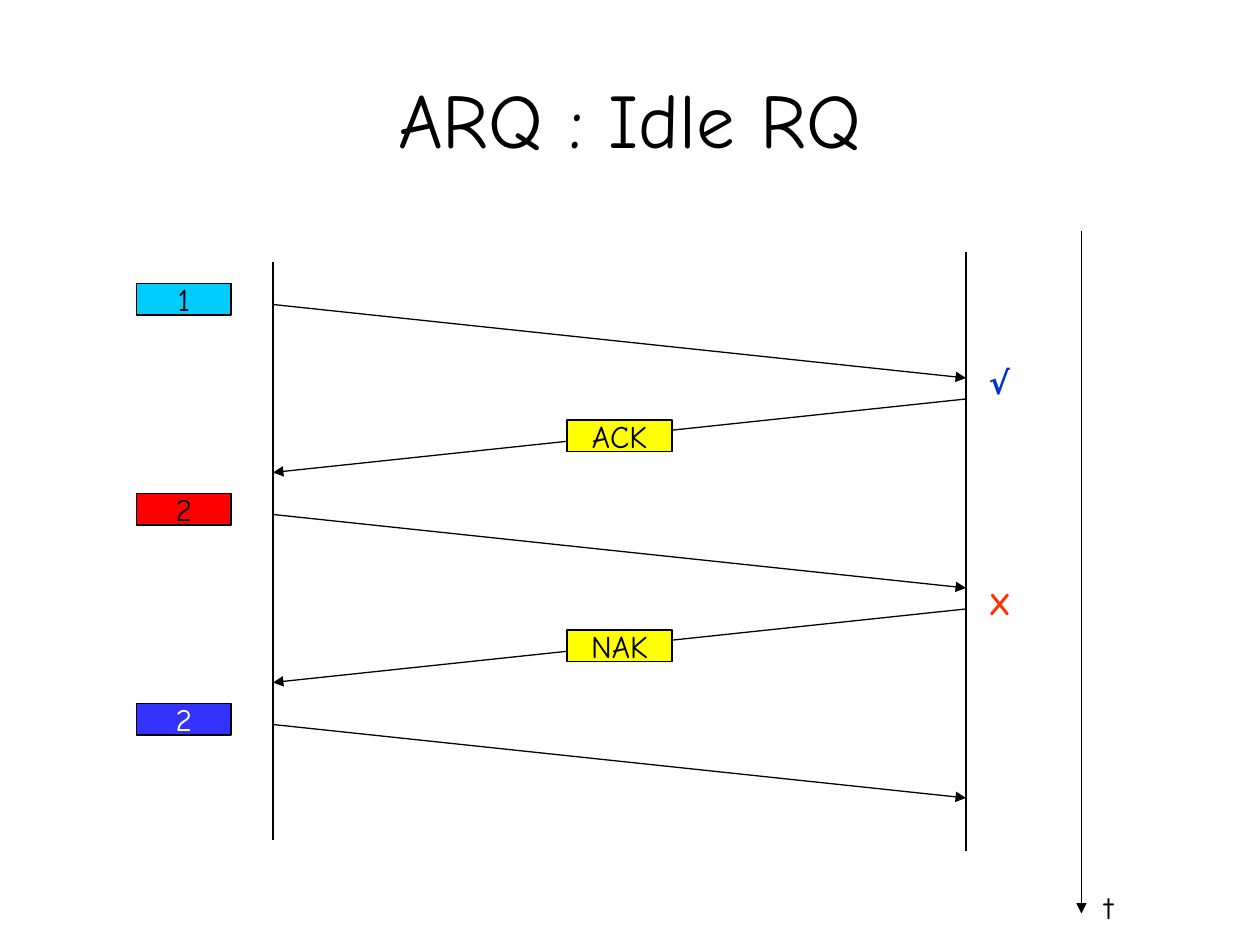
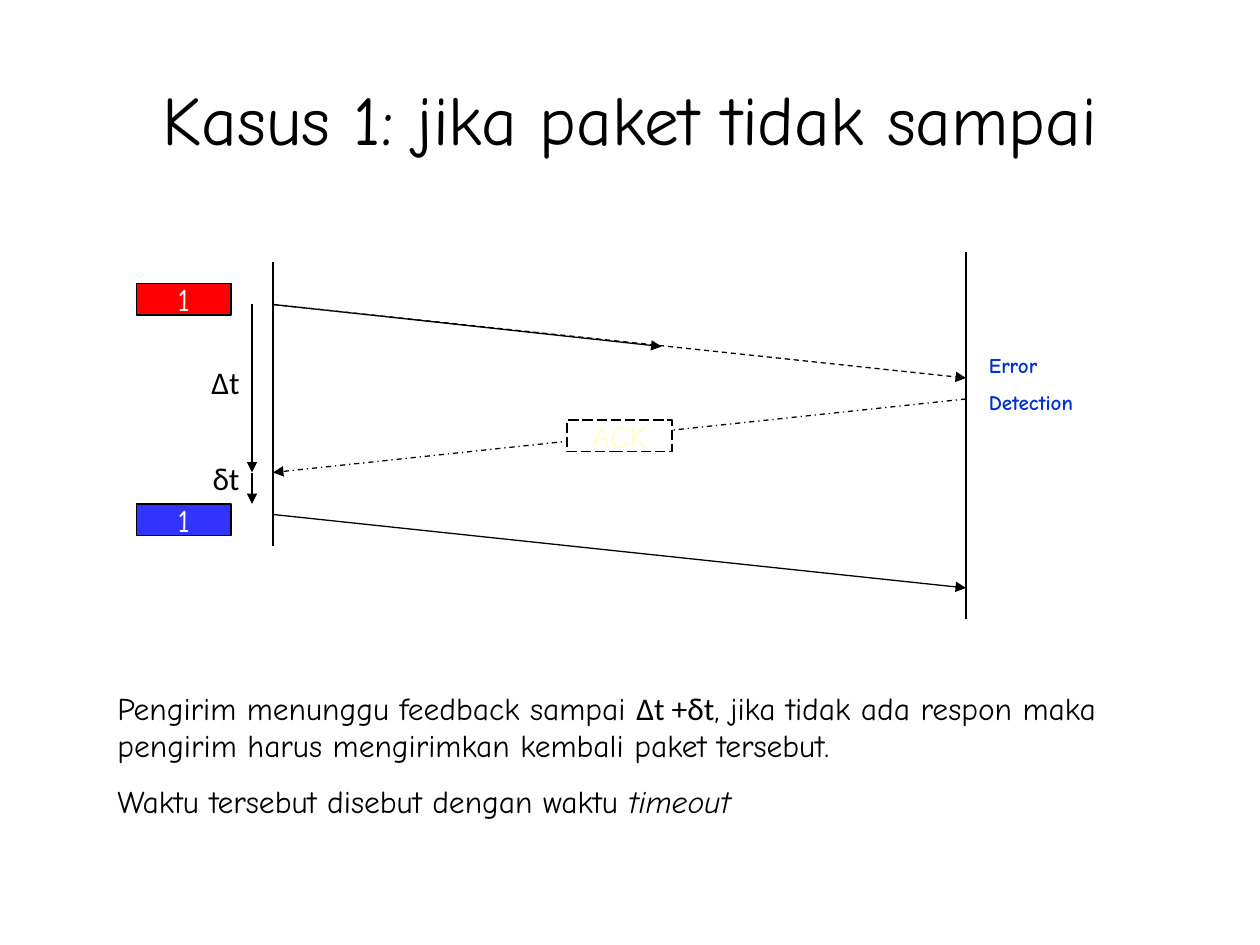
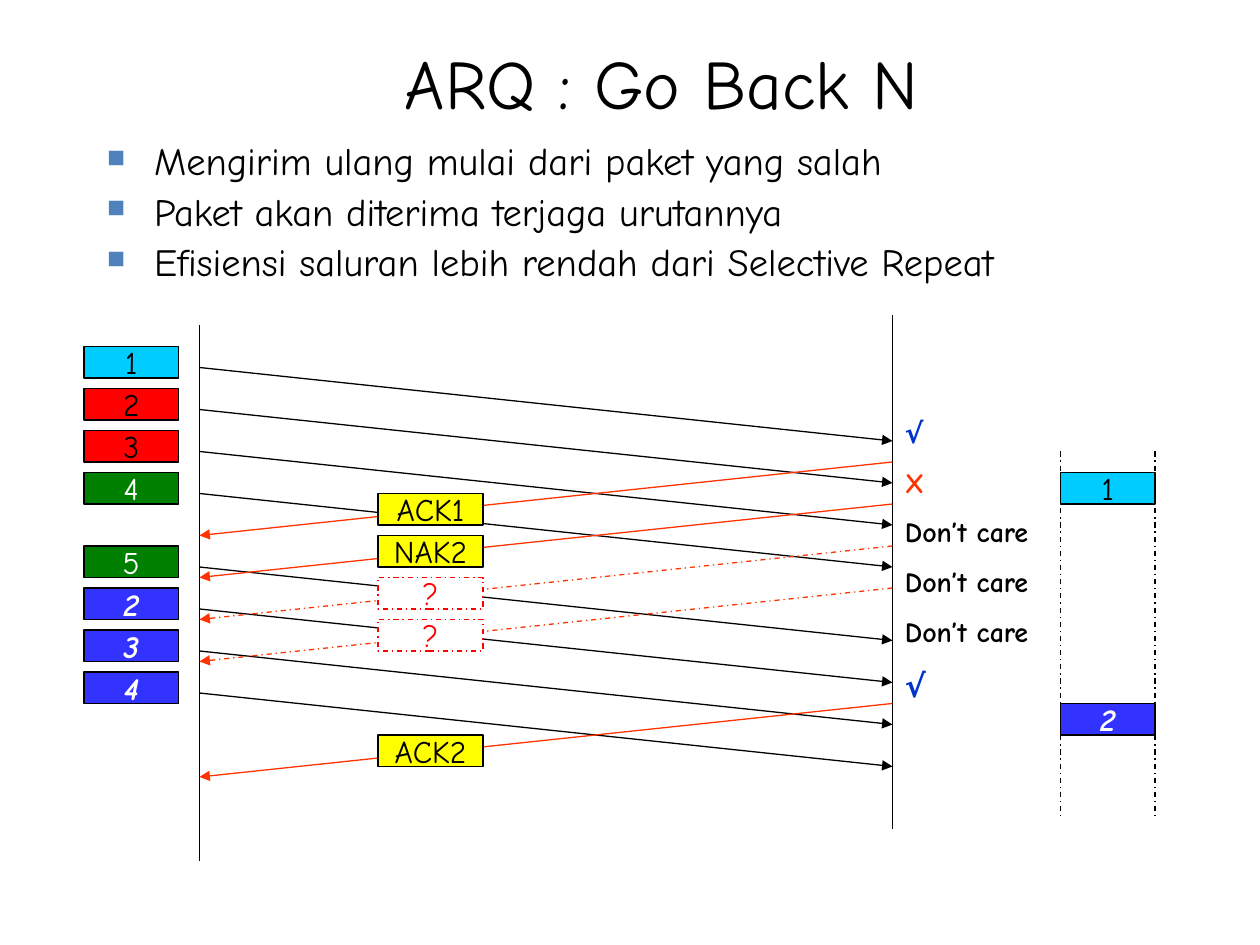
from lxml.etree import SubElement
from pptx import Presentation
from pptx.dml.color import RGBColor
from pptx.enum.dml import MSO_LINE
from pptx.enum.shapes import MSO_CONNECTOR, MSO_SHAPE
from pptx.enum.text import MSO_ANCHOR, MSO_AUTO_SIZE, PP_ALIGN
from pptx.oxml.ns import qn
from pptx.util import Emu, Pt

COLORS = {
    "black": "000000", "white": "FFFFFF", "cyan": "00CCFF", "red": "FF0000",
    "blue": "3333FF", "green": "008000", "yellow": "FFFF00", "cream": "FFFFCC",
    "ok": "0033CC", "error": "FF3300", "bullet": "4F81BD",
}
SCALE = 7620
FONT = "Comic Neue"
SYMBOL_FONT = "Calibri"
TITLE_ONLY = 5
LINE_HEIGHT = 1.15
SPAN, DROP = 660, 70
STRONG = {"bold": True, "italic": True}


def px(n):
    return Emu(n * SCALE)


def rgb(name):
    return RGBColor.from_string(COLORS[name])


class Deck:
    def __init__(self):
        self.prs = Presentation()
        self.prs.slide_width, self.prs.slide_height = px(1200), px(900)
        self.s = None
        self.left = self.right = 0

    def slide(self, title, x, y, w, h, size):
        self.s = self.prs.slides.add_slide(self.prs.slide_layouts[TITLE_ONLY])
        sp = self.s.shapes.title
        sp.left, sp.top, sp.width, sp.height = map(px, (x, y, w, h))
        tf = sp.text_frame
        tf.vertical_anchor = MSO_ANCHOR.MIDDLE
        tf.paragraphs[0].alignment = PP_ALIGN.CENTER
        self.run(tf.paragraphs[0], title, size=size)

    def run(self, p, text, size=18, color="black", font=FONT, bold=None, italic=None):
        r = p.add_run()
        r.text = text
        r.font.name, r.font.size = font, Pt(size)
        r.font.bold, r.font.italic = bold, italic
        r.font.color.rgb = rgb(color)

    def text(self, x, y, w, h, paras, align=None, wrap=True, gap=0.5, bullets=False, **style):
        tf = self.s.shapes.add_textbox(*map(px, (x, y, w, h))).text_frame
        tf.word_wrap = wrap
        tf.auto_size = MSO_AUTO_SIZE.NONE if bullets else MSO_AUTO_SIZE.SHAPE_TO_FIT_TEXT
        for i, runs in enumerate(paras):
            p = tf.add_paragraph() if i else tf.paragraphs[0]
            p.alignment = align
            if i:
                size = {**style, **runs[0][1]}.get("size", 18)
                p.space_before = Pt(round(gap * LINE_HEIGHT * size, 1))
            if bullets:
                p.line_spacing = 0.9
                self.bullet(p)
            for text, own in runs:
                self.run(p, text, **{**style, **own})

    def bullet(self, p):
        pPr = p._p.get_or_add_pPr()
        pPr.set("marL", str(px(45)))
        pPr.set("indent", str(-px(45)))
        SubElement(SubElement(pPr, qn("a:buClr")), qn("a:srgbClr"), val=COLORS["bullet"])
        SubElement(pPr, qn("a:buSzPct"), val="65000")
        SubElement(pPr, qn("a:buChar"), char="■")

    def box(self, x, y, w, label, fill, color="black", line="black", dash=None, **style):
        sp = self.s.shapes.add_shape(MSO_SHAPE.RECTANGLE, *map(px, (x, y, w, 30)))
        sp.shadow.inherit = False
        sp.fill.solid()
        sp.fill.fore_color.rgb = rgb(fill)
        self.stroke(sp.line, line, dash)
        tf = sp.text_frame
        tf.word_wrap = False
        tf.vertical_anchor = MSO_ANCHOR.MIDDLE
        p = tf.paragraphs[0]
        p.alignment = PP_ALIGN.CENTER
        self.run(p, label, color=color, **style)

    def stroke(self, line, color, dash):
        line.color.rgb = rgb(color)
        line.width = Pt(0.75)
        if dash:
            line.dash_style = dash

    def line(self, x1, y1, x2, y2, color="black", dash=None, arrow=True):
        c = self.s.shapes.add_connector(MSO_CONNECTOR.STRAIGHT, *map(px, (x1, y1, x2, y2)))
        self.stroke(c.line, color, dash)
        spPr = c._element.spPr
        if arrow:
            SubElement(spPr.find(qn("a:ln")), qn("a:tailEnd"), type="triangle")
        SubElement(spPr, qn("a:effectLst"))

    def timelines(self, left, top, left_end, right_end):
        self.left, self.right = left, left + SPAN
        self.line(self.left, top, self.left, left_end, arrow=False)
        self.line(self.right, top - 10, self.right, right_end, arrow=False)

    def send(self, y, **style):
        self.line(self.left, y, self.right, y + DROP, **style)

    def reply(self, y, **style):
        self.line(self.right, y, self.left, y + DROP, **style)

    def packet(self, x, y, label, fill, color="black", **style):
        self.box(x, y, 90, label, fill, color, **style)

    def answer(self, x, y, label, fill="yellow", **style):
        self.box(x, y, 100, label, fill, **style)


def idle_rq(d):
    d.slide("ARQ : Idle RQ", 120, 30, 960, 165, 44)
    d.timelines(260, 250, 800, 810)
    packets = [("1", "cyan", "black"), ("2", "red", "black"), ("2", "blue", "white")]
    for i, (label, fill, color) in enumerate(packets):
        y = 270 + 200 * i
        d.packet(130, y, label, fill, color)
        d.send(y + 20)
    for i, label in enumerate(("ACK", "NAK")):
        y = 380 + 200 * i
        d.reply(y)
        d.answer(540, y + 20, label)
    d.text(930, 340, 60, 60, [[("√", {})]], color="ok", bold=True)
    d.text(930, 550, 80, 48, [[("X", {})]], color="error", bold=True)
    d.line(1030, 220, 1030, 870)
    d.text(1040, 840, 50, 48, [[("t", {})]])


def lost_packet(d):
    d.slide("Kasus 1: jika paket tidak sampai", 120, 30, 960, 165, 39.6)
    d.timelines(260, 250, 520, 590)
    d.packet(130, 270, "1", "red", "white")
    d.packet(130, 480, "1", "blue", "white")
    d.send(290, dash=MSO_LINE.DASH)
    d.line(260, 290, 630, 330)
    d.reply(380, dash=MSO_LINE.DASH_DOT)
    d.answer(540, 400, "ACK", "white", color="cream", dash=MSO_LINE.LONG_DASH)
    d.send(490)
    d.line(240, 290, 240, 450)
    d.line(240, 450, 240, 480)
    d.text(170, 340, 70, 48, [[("∆t", {})]], align=PP_ALIGN.RIGHT, font=SYMBOL_FONT)
    d.text(190, 431, 50, 48, [[("δt", {})]], align=PP_ALIGN.RIGHT, wrap=False, font=SYMBOL_FONT)
    d.text(930, 330, 130, 72, [[("Error", {})], [("Detection", {})]],
           size=12, color="ok", bold=True)
    d.text(100, 650, 1020, 139, [
        [("Pengirim menunggu feedback sampai ", {}),
         ("∆t +δt", {"font": SYMBOL_FONT}),
         (", jika tidak ada respon maka pengirim harus mengirimkan kembali paket tersebut.", {})],
        [("Waktu tersebut disebut dengan waktu ", {}), ("timeout", {"italic": True})],
    ])


def go_back_n(d):
    d.slide("ARQ : Go Back N", 120, 36, 1020, 84, 39.6)
    points = ("Mengirim ulang mulai dari paket yang salah",
              "Paket akan diterima terjaga urutannya",
              "Efisiensi saluran lebih rendah dari Selective Repeat")
    d.text(90, 130, 1010, 130, [[(t, {})] for t in points], gap=0.2, bullets=True, size=22)
    d.timelines(190, 310, 820, 790)

    first = [("1", "cyan", "black", {}), ("2", "red", "black", {}),
             ("3", "red", "black", {}), ("4", "green", "white", {})]
    second = [("5", "green", "white", {})] + [(n, "blue", "white", STRONG) for n in "234"]
    for top, burst in ((330, first), (520, second)):
        for i, (label, fill, color, style) in enumerate(burst):
            y = top + 40 * i
            d.packet(80, y, label, fill, color, **style)
            d.send(y + 20)

    unknown = {"fill": "white", "color": "red", "line": "red", "dash": MSO_LINE.DASH_DOT}
    answers = [(440, "ACK1", {}), (480, "NAK2", {}), (520, "?", unknown),
               (560, "?", unknown), (670, "ACK2", {})]
    for y, label, style in answers:
        d.reply(y, color="error", dash=style.get("dash"))
    for y, label, style in answers:
        d.answer(360, y + 30, label, **style)

    ignored = [("Don’t care", {})]
    d.text(850, 390, 210, 338, [
        [("√", {"color": "ok"})], [("X", {"color": "error"})],
        ignored, ignored, ignored, [("√", {"color": "ok", "size": 18})],
    ], size=16, bold=True)

    d.packet(1010, 450, "1", "cyan")
    d.packet(1010, 670, "2", "blue", "white", **STRONG)
    for x in (1010, 1100):
        d.line(x, 430, x, 780, dash=MSO_LINE.DASH_DOT, arrow=False)


def main():
    d = Deck()
    idle_rq(d)
    lost_packet(d)
    go_back_n(d)
    d.prs.save("out.pptx")


if __name__ == "__main__":
    main()
